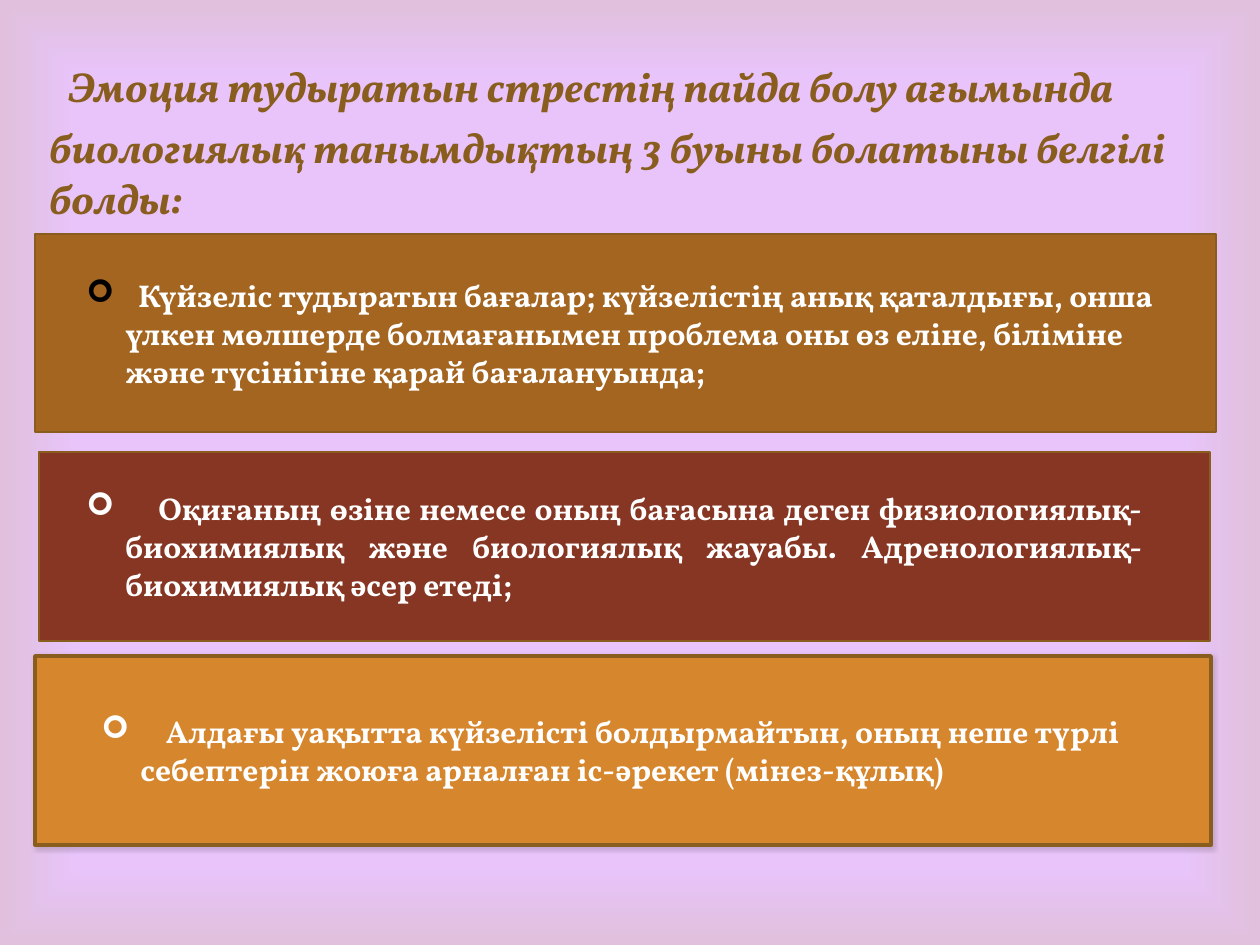
from lxml import etree
from pptx import Presentation
from pptx.dml.color import RGBColor
from pptx.enum.shapes import MSO_SHAPE as Shape
from pptx.enum.text import MSO_ANCHOR as Anchor, PP_ALIGN as Align
from pptx.oxml import parse_xml
from pptx.oxml.ns import nsdecls, qn
from pptx.util import Emu, Pt

FONT = "Vollkorn"
BROWN = RGBColor(0x89, 0x5D, 0x1D)
OCHRE = RGBColor(0xA3, 0x65, 0x20)
MAROON = RGBColor(0x87, 0x36, 0x25 - 1)
ORANGE = RGBColor(0xD6, 0x86, 0x2D)
WHITE = RGBColor(0xFF, 0xFF, 0xFF)
BLACK = RGBColor(0x00, 0x00, 0x00)
LILAC = RGBColor(0xE8, 0xC4, 0xFB)
MAUVE = RGBColor(0xE0, 0xC0, 0xDC)

# Content; places are left, top, width, height in px
PAGE = (0, 0, 1260, 945)
TITLE_PLACE = (37, 26, 1211, 179)
TITLE = ("Эмоция тудыратын стрестің пайда болу ағымында биологиялық "
         "танымдықтың 3 буыны болатыны белгілі болды:")
HANGING = 39
PANELS = [
    dict(place=(35, 234, 1181, 198), fill=OCHRE, line=1.5, shadow=False,
         text_place=(74, 270, 1101, 127), bullet=BLACK, gap=3.7, align=Align.LEFT,
         text="Күйзеліс тудыратын бағалар; күйзелістің анық қаталдығы, онша "
              "үлкен мөлшерде болмағанымен проблема оны өз еліне, біліміне "
              "және түсінігіне қарай бағалануында;"),
    dict(place=(39, 452, 1171, 189), fill=MAROON, line=1.5, shadow=False,
         text_place=(74, 483, 1081, 127), bullet=WHITE, gap=14, align=Align.JUSTIFY,
         text="Оқиғаның өзіне немесе оның бағасына деген физиологиялық-биохимиялық "
              "және биологиялық жауабы. Адренологиялық-биохимиялық әсер етеді;"),
    dict(place=(35, 656, 1176, 189), fill=ORANGE, line=2, shadow=True,
         text_place=(89, 706, 1067, 89), bullet=WHITE, gap=11, align=Align.LEFT,
         text="Алдағы уақытта күйзелісті болдырмайтын, оның неше түрлі "
              "себептерін жоюға арналған іс-әрекет (мінез-құлық)"),
]


def px(length):
    return Emu(round(length * 914400 / 126))


def add_rect(page, place, fill=None, line=None):
    box = page.shapes.add_shape(Shape.RECTANGLE, *map(px, place))
    box.shadow.inherit = False
    if fill is not None:
        box.fill.solid()
        box.fill.fore_color.rgb = fill
    if line is None:
        box.line.fill.background()
    else:
        box.line.color.rgb = BROWN
        box.line.width = Pt(line)
    return box


def add_text(page, place, anchor):
    frame = page.shapes.add_textbox(*map(px, place)).text_frame
    frame.word_wrap = True
    frame.vertical_anchor = anchor
    return frame.paragraphs[0]


def add_span(para, text, color, **formats):
    span = para.add_run()
    span.text = text
    span.font.color.rgb = color
    for name, value in dict(name=FONT, **formats).items():
        setattr(span.font, name, value)
    return span


def add_bullet(para, color):
    props = para._p.get_or_add_pPr()
    props.set("marL", str(px(HANGING)))
    props.set("indent", str(-px(HANGING)))
    tint = etree.SubElement(props, qn("a:buClr"))
    etree.SubElement(tint, qn("a:srgbClr"), val=str(color))
    etree.SubElement(props, qn("a:buFont"), typeface="Wingdings")
    etree.SubElement(props, qn("a:buChar"), char="➢")


def add_shadow(box):
    effects = box._element.spPr.find(qn("a:effectLst"))
    effects.append(parse_xml(
        f'<a:outerShdw {nsdecls("a")} blurRad="{Pt(3)}" dist="{Pt(1)}" dir="5400000" '
        'rotWithShape="0"><a:srgbClr val="000000"><a:alpha val="15000"/></a:srgbClr>'
        '</a:outerShdw>'))


def add_backdrop(page):
    page.background.fill.solid()
    page.background.fill.fore_color.rgb = LILAC
    box = add_rect(page, PAGE)
    gradient = parse_xml(
        f'<a:gradFill {nsdecls("a")} rotWithShape="1"><a:gsLst>'
        f'<a:gs pos="83000"><a:srgbClr val="{LILAC}"/></a:gs>'
        f'<a:gs pos="100000"><a:srgbClr val="{MAUVE}"/></a:gs></a:gsLst>'
        '<a:path path="rect"><a:fillToRect l="50000" t="50000" r="50000" b="50000"/>'
        '</a:path></a:gradFill>')
    box._element.spPr.find(qn("a:prstGeom")).addnext(gradient)


def main():
    deck = Presentation()
    deck.slide_width, deck.slide_height = map(px, PAGE[2:])
    page = deck.slides.add_slide(deck.slide_layouts[6])
    add_backdrop(page)

    # Title, led by one tall space
    para = add_text(page, TITLE_PLACE, Anchor.MIDDLE)
    add_span(para, " ", BROWN, size=Pt(54))
    add_span(para, TITLE, BROWN, size=Pt(24), bold=True, italic=True)

    # Panels with one bulleted statement each
    for panel in PANELS:
        box = add_rect(page, panel["place"], panel["fill"], panel["line"])
        if panel["shadow"]:
            add_shadow(box)
        para = add_text(page, panel["text_place"], Anchor.TOP)
        para.alignment = panel["align"]
        add_bullet(para, panel["bullet"])
        lead = add_span(para, " ", panel["bullet"], size=Pt(18), bold=True)
        lead._r.get_or_add_rPr().set("spc", str(round(panel["gap"] * 100)))
        add_span(para, panel["text"], WHITE, size=Pt(18), bold=True)

    deck.save("out.pptx")


if __name__ == "__main__":
    main()
